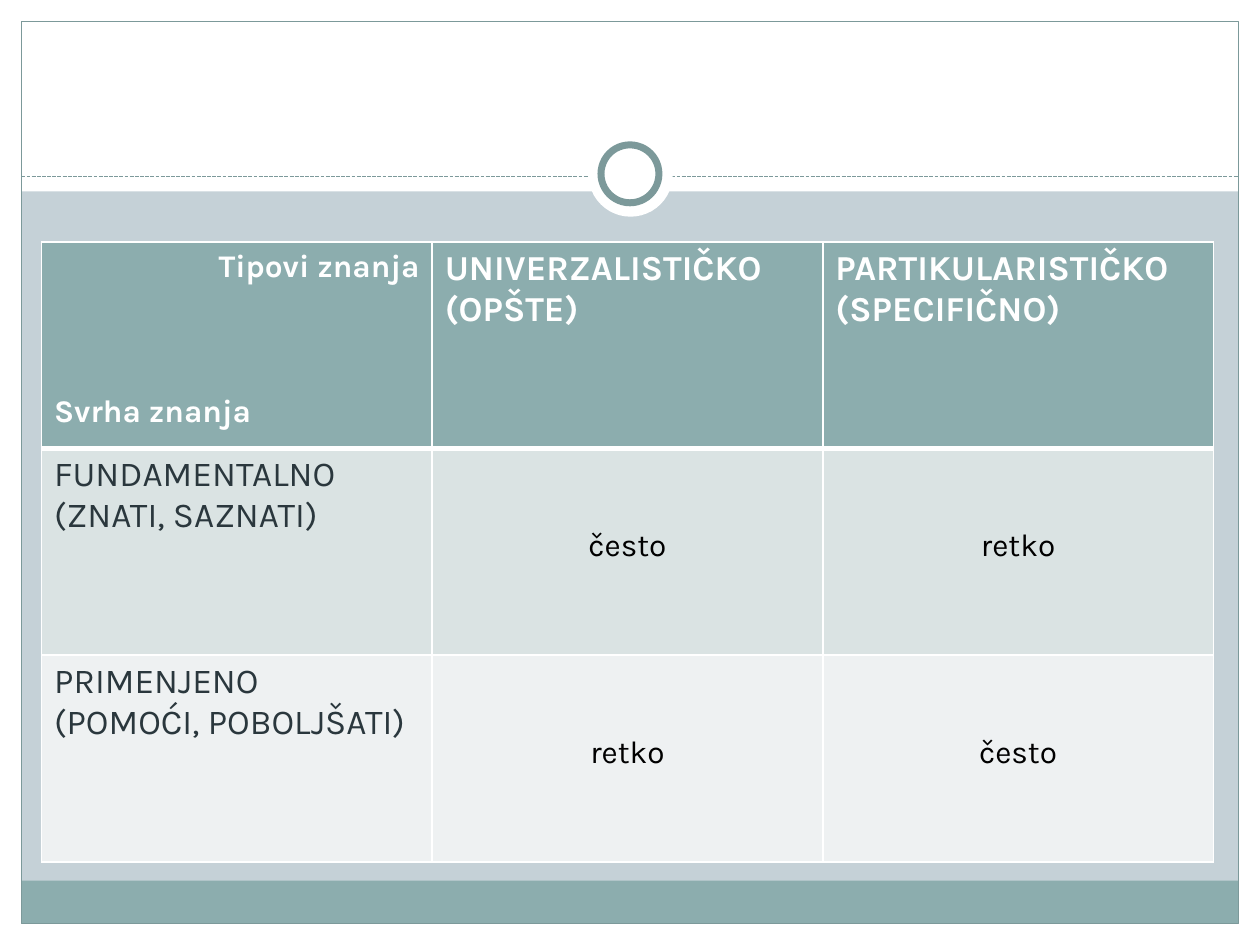
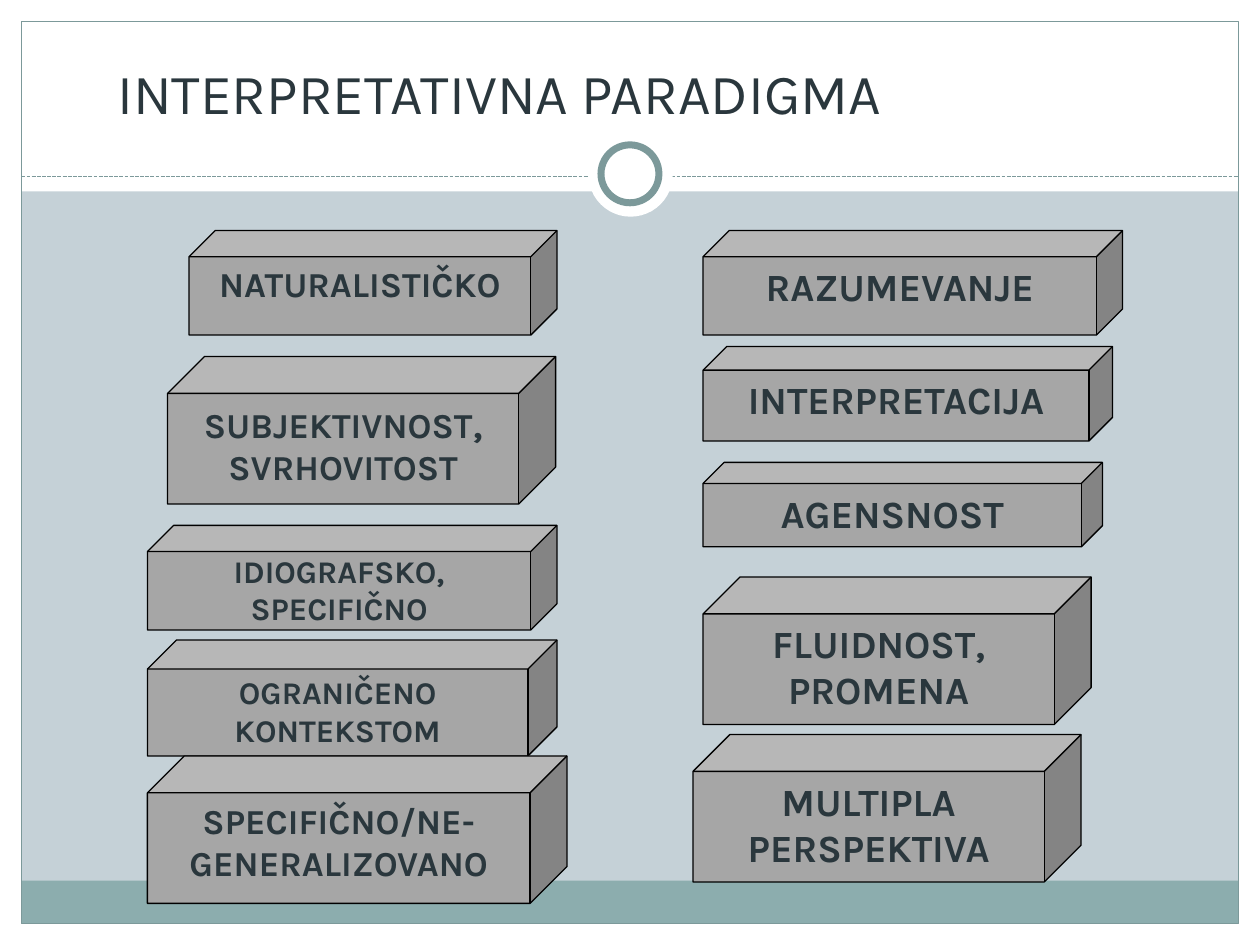
import lxml.etree
import pptx
import pptx.util
from pptx.dml.color import RGBColor
from pptx.enum.dml import MSO_LINE
from pptx.enum.shapes import MSO_CONNECTOR, MSO_SHAPE
from pptx.enum.text import MSO_ANCHOR, MSO_AUTO_SIZE, PP_ALIGN
from pptx.oxml.ns import qn
from pptx.util import Inches, Pt

FONT = "Karla"
WHITE, BLACK, INK = "FFFFFF", "000000", "2A373D"
TEAL, DARK_TEAL, BACKDROP, GREY = "8CADAE", "7C999A", "C5D1D7", "A6A6A6"


def rgb(value):
    return RGBColor.from_string(value)


def put(tf, text, size=18, color=INK, bold=False, align=PP_ALIGN.LEFT):
    """Append text to the last paragraph; each newline starts another one."""
    for i, line in enumerate(text.split("\n")):
        p = tf.add_paragraph() if i else tf.paragraphs[-1]
        p.alignment = align
        r = p.add_run()
        r.text = line
        r.font.name, r.font.size, r.font.bold = FONT, Pt(size), bold
        r.font.color.rgb = rgb(color)
    return p


prs = pptx.Presentation()
prs.slide_width, prs.slide_height = Inches(10), Inches(7.5)
TITLE_ONLY, BLANK = prs.slide_layouts[5], prs.slide_layouts[6]

# Shared frame: drawn on the first slide, then moved to the master
s = prs.slides.add_slide(BLANK)
master = prs.slide_master
master.background.fill.solid()
master.background.fill.fore_color.rgb = rgb(BACKDROP)

RECT, OVAL = MSO_SHAPE.RECTANGLE, MSO_SHAPE.OVAL
frame = [  # shape, left, top, width, height, fill, line width
    (RECT, 0, 7.33, 10, 0.17, WHITE, 0),
    (RECT, 0, 0, 10, 1.52, WHITE, 0),
    (RECT, 0, 0, 0.17, 7.5, WHITE, 0),
    (RECT, 9.83, 0, 0.17, 7.5, WHITE, 0),
    (RECT, 0.17, 6.99, 9.66, 0.34, TEAL, 0),
    (RECT, 0.17, 0.17, 9.66, 7.16, None, 0.75),
    (None, 0.17, 1.4, 9.66, 0, None, 0.75),
    (OVAL, 4.67, 1.05, 0.67, 0.67, WHITE, 0),
    (OVAL, 4.77, 1.15, 0.46, 0.46, WHITE, 4),
]
for n, (kind, x, y, w, h, fill, line) in enumerate(frame):
    if kind is None:
        sp = s.shapes.add_connector(MSO_CONNECTOR.STRAIGHT, Inches(x), Inches(y),
                                    Inches(x + w), Inches(y + h))
        sp.line.dash_style = MSO_LINE.SQUARE_DOT
        lxml.etree.SubElement(sp._element.spPr, qn("a:effectLst"))
    else:
        sp = s.shapes.add_shape(kind, Inches(x), Inches(y), Inches(w), Inches(h))
        sp.shadow.inherit = False
        if fill:
            sp.fill.solid()
            sp.fill.fore_color.rgb = rgb(fill)
        else:
            sp.fill.background()
    if line:
        sp.line.color.rgb = rgb(DARK_TEAL)
        sp.line.width = Pt(line)
    else:
        sp.line.fill.background()
    sp._element.xpath(".//p:cNvPr")[0].set("id", str(100 + n))
    master.shapes._spTree.append(sp._element)

# Slide 1: knowledge table
rows = [
    ("Tipovi znanja\nSvrha znanja", "UNIVERZALISTIČKO\n(OPŠTE)",
     "PARTIKULARISTIČKO\n(SPECIFIČNO)"),
    ("FUNDAMENTALNO\n(ZNATI, SAZNATI)", "često", "retko"),
    ("PRIMENJENO\n(POMOĆI, POBOLJŠATI)", "retko", "često"),
]
row_fills = [TEAL, "DAE3E3", "EEF1F2"]
table = s.shapes.add_table(3, 3, Inches(0.33), Inches(1.92), Inches(9.3), Inches(4.92)).table
for i, row in enumerate(rows):
    table.rows[i].height = Inches(1.64)
    for j, text in enumerate(row):
        cell = table.cell(i, j)
        cell.fill.solid()
        cell.fill.fore_color.rgb = rgb(row_fills[i])
        tf = cell.text_frame
        if i == j == 0:
            p = put(tf, text, color=WHITE, bold=True, align=PP_ALIGN.RIGHT)
            p.alignment = PP_ALIGN.LEFT
            p.space_before = Pt(62)
        elif i == 0:
            put(tf, text, size=20, color=WHITE, bold=True)
        elif j == 0:
            put(tf, text, size=20)
        else:
            cell.margin_top = Inches(0.63)
            put(tf, text, color=BLACK, align=PP_ALIGN.CENTER)

        # White borders, heavier under the header row
        tcPr = cell._tc.get_or_add_tcPr()
        for k, side in enumerate(("lnL", "lnR", "lnT", "lnB")):
            heavy = (i, side) in ((0, "lnB"), (1, "lnT"))
            ln = lxml.etree.Element(qn("a:" + side), w=str(Pt(3 if heavy else 1)))
            solid = lxml.etree.SubElement(ln, qn("a:solidFill"))
            lxml.etree.SubElement(solid, qn("a:srgbClr"), val=WHITE)
            tcPr.insert(k, ln)

# Slide 2: title
s = prs.slides.add_slide(TITLE_ONLY)
title = s.shapes.title
title.left, title.top = Inches(0.83), Inches(0.33)
title.width, title.height = Inches(8.5), Inches(1.25)
tf = title.text_frame
tf.auto_size = MSO_AUTO_SIZE.NONE
tf.vertical_anchor = MSO_ANCHOR.BOTTOM
tf.margin_bottom = Inches(0.58)
put(tf, "INTERPRETATIVNA PARADIGMA", size=32.4)

# Slide 2: two stacks of blocks; a tighter inset keeps two lines inside a low block
blocks = [  # left, top, width, height, vertical inset, runs of (text, size)
    (1.5, 1.83, 2.92, 0.83, 0.05, [("NATURALISTIČKO", 20)]),
    (1.33, 2.83, 3.08, 1.17, 0.05,
     [("SUBJEKTIVNOST", 20), (", ", 22), ("SVRHOVITOST", 20)]),
    (1.17, 4.17, 3.25, 0.83, 0, [("IDIOGRAFSKO, SPECIFIČNO", 18)]),
    (1.17, 5.08, 3.25, 0.92, 0.03, [("OGRANIČENO\nKONTEKSTOM", 18)]),
    (1.17, 6, 3.33, 1.17, 0.05, [("SPECIFIČNO/NE-GENERALIZOVANO", 20)]),
    (5.58, 1.83, 3.33, 0.83, 0.05, [("RAZUMEVANJE", 22)]),
    (5.58, 2.75, 3.25, 0.75, 0.05, [("INTERPRETACIJA", 22)]),
    (5.58, 3.67, 3.17, 0.67, 0.05, [("AGENSNOST", 22)]),
    (5.58, 4.58, 3.08, 1.17, 0.05, [("FLUIDNOST, PROMENA", 22)]),
    (5.5, 5.83, 3.08, 1.17, 0.05, [("MULTIPLA PERSPEKTIVA", 22)]),
]
for x, y, w, h, inset, runs in blocks:
    sp = s.shapes.add_shape(MSO_SHAPE.CUBE, Inches(x), Inches(y), Inches(w), Inches(h))
    sp.shadow.inherit = False
    sp.adjustments[0] = 0.25
    sp.fill.solid()
    sp.fill.fore_color.rgb = rgb(GREY)
    sp.line.color.rgb = rgb(BLACK)
    sp.line.width = Pt(0.75)
    tf = sp.text_frame
    tf.word_wrap = True
    tf.vertical_anchor = MSO_ANCHOR.TOP
    tf.margin_top = tf.margin_bottom = Inches(inset)
    for text, size in runs:
        put(tf, text, size=size, bold=True, align=PP_ALIGN.CENTER)

prs.save("out.pptx")
